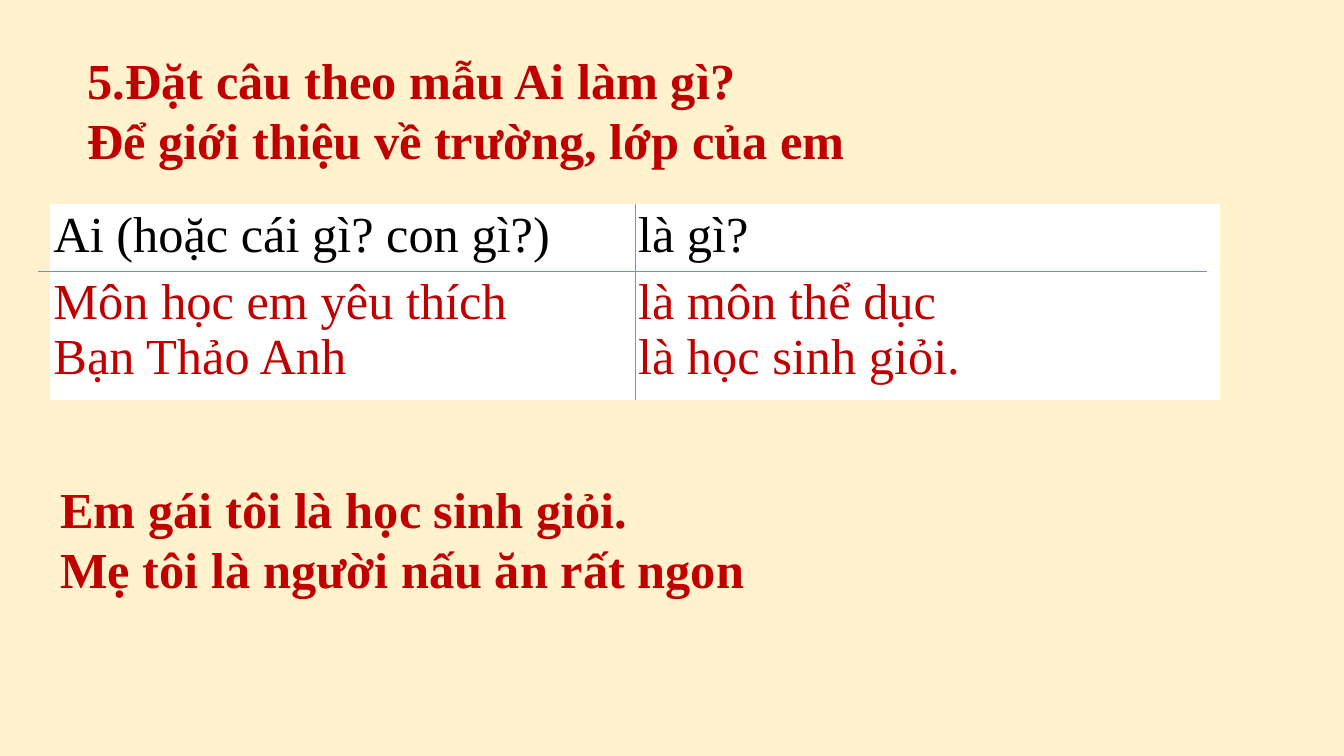
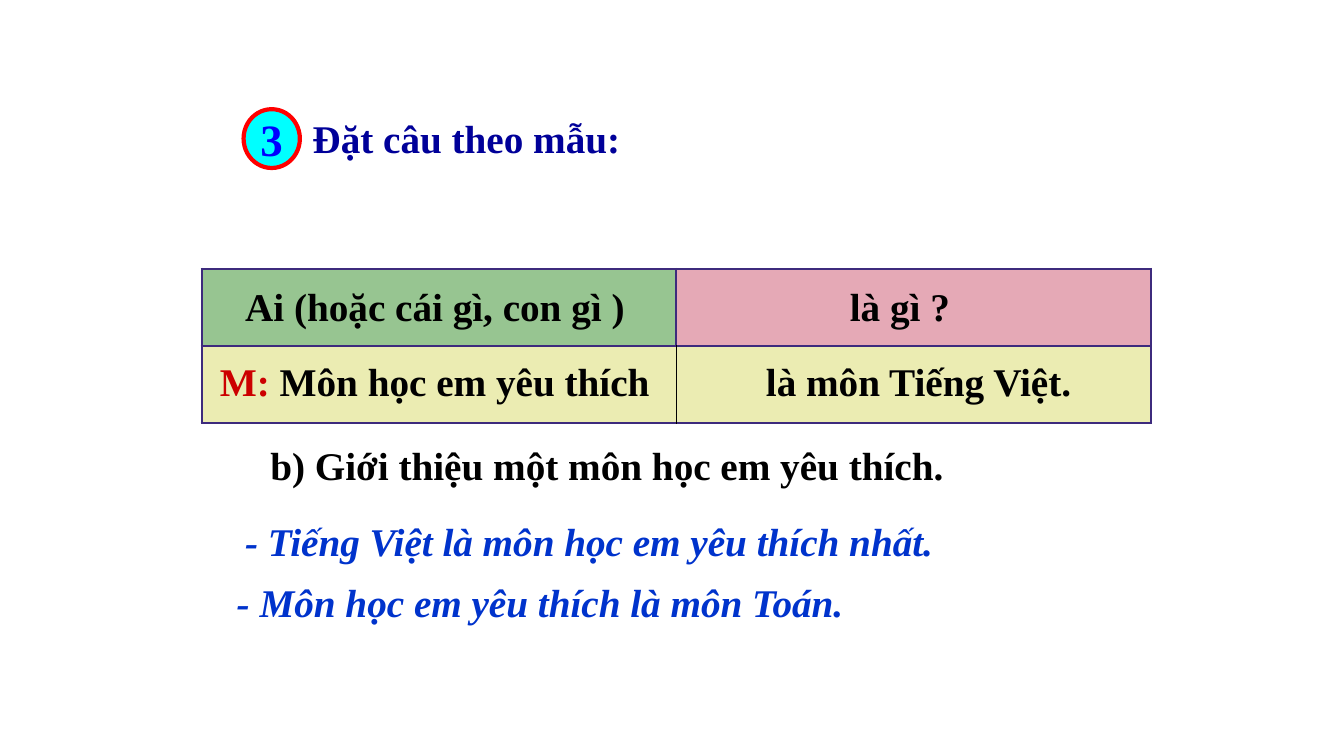
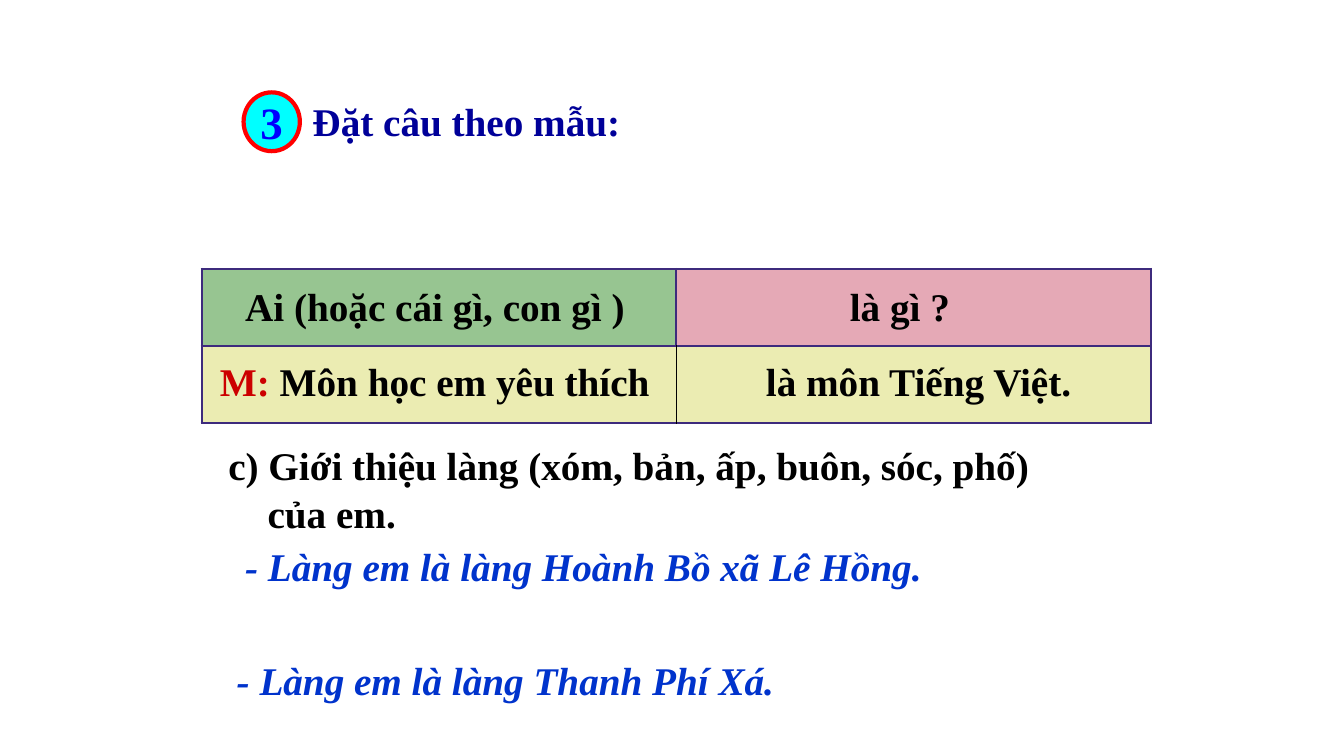
from lxml.etree import SubElement as Sub
from pptx import Presentation as Deck
from pptx.dml.color import RGBColor as RGB
from pptx.enum.shapes import MSO_CONNECTOR as Link, MSO_SHAPE as Form
from pptx.enum.text import MSO_ANCHOR as Anchor, MSO_AUTO_SIZE as Auto, PP_ALIGN as Align
from pptx.oxml.ns import qn
from pptx.util import Inches, Pt

CREAM = RGB(0xFF, 0xF2, 0xCC)
WHITE = RGB(0xFF, 0xFF, 0xFF)
BLACK = RGB(0, 0, 0)
BRICK = RGB(0xC0, 0, 0)
RED = RGB(0xFF, 0, 0)
CRIMSON = RGB(0xCC, 0, 0)
CYAN = RGB(0, 0xFF, 0xFF)
BLUE = RGB(0, 0, 0xFF)
NAVY = RGB(0, 0, 0x99)
AZURE = RGB(0, 0x33, 0xCC)
STEEL = RGB(0x5B, 0x9B, 0xD5)
GREEN = RGB(0x97, 0xC5, 0x91)
PINK = RGB(0xE5, 0xA9, 0xB6)
LEMON = RGB(0xEB, 0xEC, 0xB2)
PURPLE = RGB(0x3D, 0x2B, 0x7D)


class Board:
    FONT = "Times New Roman"
    COLS, ROWS = 160, 90

    def __init__(self):
        self.deck = Deck()
        self.deck.slide_width = Inches(13.33)
        self.deck.slide_height = Inches(7.5)

    def x(self, cols):
        return round(self.deck.slide_width * cols / self.COLS)

    def y(self, rows):
        return round(self.deck.slide_height * rows / self.ROWS)

    def box(self, col, row, wide, high):
        return self.x(col), self.y(row), self.x(wide), self.y(high)

    def page(self, back):
        self.slide = self.deck.slides.add_slide(self.deck.slide_layouts[5])
        fill = self.slide.background.fill
        fill.solid()
        fill.fore_color.rgb = back

    def style(self, frame, lines, size, color, bold=True, italic=False, align=Align.LEFT):
        frame.text = "\n".join(lines)
        for par in frame.paragraphs:
            par.alignment = align
            font = par.font
            font.name, font.size = self.FONT, Pt(size)
            font.bold, font.italic = bold, italic
            font.color.rgb = color

    def title(self, area, lines, size, color):
        head = self.slide.shapes.title
        head.left, head.top, head.width, head.height = self.box(*area)
        frame = head.text_frame
        frame.auto_size = Auto.NONE
        frame.vertical_anchor = Anchor.TOP
        self.style(frame, lines, size, color)

    def text(self, area, lines, size=28, color=BLACK, italic=False):
        frame = self.slide.shapes.add_textbox(*self.box(*area)).text_frame
        frame.word_wrap = True
        self.style(frame, lines, size, color, italic=italic)
        return frame

    def badge(self, area, mark):
        disc = self.slide.shapes.add_shape(Form.OVAL, *self.box(*area))
        disc.shadow.inherit = False
        disc.fill.solid()
        disc.fill.fore_color.rgb = CYAN
        disc.line.color.rgb = RED
        disc.line.width = Pt(3)
        frame = disc.text_frame
        frame.word_wrap = False
        frame.vertical_anchor = Anchor.MIDDLE
        self.style(frame, [mark], 32, BLUE, align=Align.CENTER)

    def rule(self, start, end):
        ends = self.x(start[0]), self.y(start[1]), self.x(end[0]), self.y(end[1])
        line = self.slide.shapes.add_connector(Link.STRAIGHT, *ends)
        line.line.color.rgb = STEEL
        line.line.width = Pt(0.5)
        Sub(line._element.spPr, qn("a:effectLst"))

    def table(self, area, highs, fills):
        grid = self.slide.shapes.add_table(len(fills), len(fills[0]), *self.box(*area)).table
        grid.first_row = grid.horz_banding = False
        for row, high in zip(grid.rows, highs):
            row.height = self.y(high)
        for r, row in enumerate(fills):
            for c, color in enumerate(row):
                cell = grid.cell(r, c)
                cell.fill.solid()
                cell.fill.fore_color.rgb = color
        return grid

    def edge(self, cell, inner=None):
        tc = cell._tc.get_or_add_tcPr()
        for spot, side in enumerate("LRTB"):
            color, width = (BLACK, 1) if side == inner else (PURPLE, 1.5)
            line = tc.makeelement(qn("a:ln" + side), {"w": str(Pt(width))})
            Sub(Sub(line, qn("a:solidFill")), qn("a:srgbClr"), val=str(color))
            tc.insert(spot, line)


def school(board):
    board.page(CREAM)
    board.title((9.2, 5.2, 146, 23),
                ["5.Đặt câu theo mẫu Ai làm gì?", "Để giới thiệu về trường, lớp của em"], 36, BRICK)
    grid = board.table((6, 24.3, 139.2, 23.3), (8, 15.3), [[WHITE] * 2] * 2)
    words = [
        [["Ai (hoặc cái gì? con gì?)"], ["là gì?"]],
        [["Môn học em yêu thích", "Bạn Thảo Anh"], ["là môn thể dục", "là học sinh giỏi."]],
    ]
    for r, (row, color) in enumerate(zip(words, (BLACK, BRICK))):
        for c, lines in enumerate(row):
            cell = grid.cell(r, c)
            cell.margin_left = cell.margin_right = Inches(0.03)
            cell.margin_top = cell.margin_bottom = Inches(0.03)
            board.style(cell.text_frame, lines, 36, color, bold=False)
    board.rule((75.6, 24.3), (75.6, 47.6))
    board.rule((4.5, 32.3), (143.7, 32.3))
    board.text((6, 56.3, 146, 15.7),
               ["Em gái tôi là học sinh giỏi.", "Mẹ tôi là người nấu ăn rất ngon"], 36, BRICK)


def drill(board, top, ask, lines, answers):
    board.page(WHITE)
    board.badge((29, top, 6.7, 7), "3")
    board.title((36, top, 40, 6.8), ["Đặt câu theo mẫu:"], 28, NAVY)
    grid = board.table((24, 32, 113, 18.4), (9.2, 9.2), [[GREEN, PINK], [LEMON, LEMON]])
    for r, row in enumerate(((None, None), ("R", "L"))):
        for c, inner in enumerate(row):
            board.edge(grid.cell(r, c), inner)
    board.text((28, 33, 49, 6.8), ["Ai (hoặc cái gì, con gì )"])
    board.text((100, 33, 16, 6.8), ["là gì ?"])
    par = board.text((25, 42, 55, 6.8), ["M:"], color=CRIMSON).paragraphs[0]
    par.runs[0].font.color.rgb = CRIMSON
    rest = par.add_run()
    rest.text = " Môn học em yêu thích"
    rest.font.color.rgb = BLACK
    board.text((90, 42, 40, 6.8), ["là môn Tiếng Việt."])
    frame = board.text((ask, 52, 101, 6.8 * len(lines)), lines)
    for par in frame.paragraphs[1:]:
        par._p.get_or_add_pPr().set("marL", str(Pt(28)))
    for col, (row, line) in zip((28, 27), answers):
        board.text((col, row, 108, 6.8), [line], color=AZURE, italic=True)


def main():
    board = Board()
    school(board)
    drill(board, 13, 31, ["b) Giới thiệu một môn học em yêu thích."],
          [(61, "- Tiếng Việt là môn học em yêu thích nhất."),
           (68.2, "- Môn học em yêu thích là môn Toán.")])
    drill(board, 11, 26, ["c) Giới thiệu làng (xóm, bản, ấp, buôn, sóc, phố)", "của em."],
          [(64, "- Làng em là làng Hoành Bồ xã Lê Hồng."),
           (77.6, "- Làng em là làng Thanh Phí Xá.")])
    board.deck.save("out.pptx")


if __name__ == "__main__":
    main()
